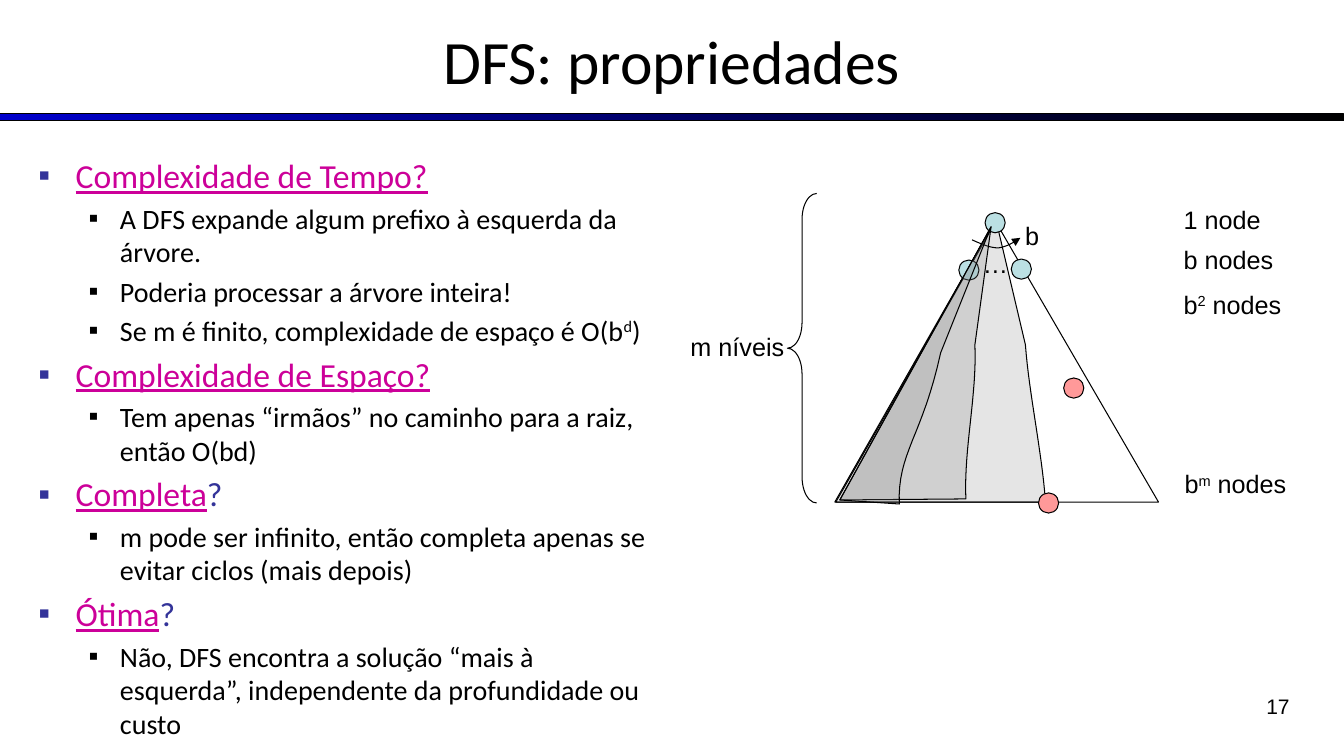
from lxml.etree import SubElement
from pptx import Presentation
from pptx.dml.color import RGBColor
from pptx.enum.shapes import MSO_SHAPE
from pptx.enum.text import MSO_ANCHOR, MSO_AUTO_SIZE, PP_ALIGN
from pptx.oxml.ns import qn
from pptx.util import Inches, Pt

BLACK, NAVY, MAGENTA = "000000", "333399", "CC0099"
NODE_BLUE, GOAL_RED, SHADE = "BBE0E3", "FF9999", "808080"
NODE_SIZE = 0.2
CURVE_STEPS = 16

TITLE = "DFS: propriedades"
# Heading, plain suffix, answers; "^" switches superscript on and off
TOPICS = [
    ("Complexidade de Tempo?", "", [
        "A DFS expande algum prefixo à esquerda da árvore.",
        "Poderia processar a árvore inteira!",
        "Se m é finito, complexidade de espaço é O(b^d^)",
    ]),
    ("Complexidade de Espaço?", "", [
        "Tem apenas “irmãos” no caminho para a raiz, então O(bd)",
    ]),
    ("Completa", "?", [
        "m pode ser infinito, então completa apenas se evitar ciclos (mais depois)",
    ]),
    ("Ótima", "?", [
        "Não, DFS encontra a solução “mais à esquerda”, "
        "independente da profundidade ou custo",
    ]),
]

# Outlines: two numbers are a line end, six numbers a Bézier curve
TREE = [(8.28, 4.98), (11.49, 4.98), (9.87, 2.19)]
WIDE_PREFIX = [(8.29, 4.98), (10.37, 4.98),
               (10.33, 4.46, 10.21, 3.93, 10.17, 3.42), (9.88, 2.19)]
MIDDLE_PREFIX = [(8.33, 4.96), (9.58, 4.95),
                 (9.56, 4.44, 9.69, 3.93, 9.67, 3.42), (9.83, 2.25)]
NARROW_PREFIX = [(8.33, 4.96), (8.92, 5),
                 (8.9, 4.49, 9.15, 4.33, 9.33, 3.5), (9.83, 2.25)]
BRANCHING_ARC = [(9.64, 2.38), (9.73, 2.42, 9.82, 2.46, 9.9, 2.46),
                 (9.98, 2.45, 10.05, 2.41, 10.12, 2.36)]

TREE_NODES = [(9.77, 2.11, NODE_BLUE), (9.51, 2.58, NODE_BLUE),
              (10.03, 2.57, NODE_BLUE), (10.3, 4.89, GOAL_RED)]
DEEP_GOAL = (10.55, 3.75, GOAL_RED)
LABELS = [
    ("…", 9.65, 2.41, 0.3), ("b", 10.07, 2.14, 0.33),
    ("1 node", 11.64, 1.98, 1.22), ("b nodes", 11.64, 2.37, 1.22),
    ("b^2^ nodes", 11.64, 2.82, 1.22), ("b^m^ nodes", 11.65, 4.6, 1.6),
    ("m níveis", 6.75, 3.24, 1.38),
]
PAGE = "17"


def rgb(value):
    return RGBColor.from_string(value)


def box(*inches):
    return [Inches(n) for n in inches]


def place(holder, *inches):
    holder.left, holder.top, holder.width, holder.height = box(*inches)


def add_run(paragraph, text, size, font, color=BLACK, underline=None):
    run = paragraph.add_run()
    run.text = text
    run.font.size, run.font.name = Pt(size), font
    run.font.color.rgb = rgb(color)
    run.font.underline = underline
    return run


def add_marked_text(paragraph, text, size, font):
    """Add runs, raising every part that stands between two "^" marks."""
    for i, part in enumerate(text.split("^")):
        if part:
            run = add_run(paragraph, part, size, font)
            if i % 2:
                run.font._element.set("baseline", "30000")


def set_bullet(paragraph, indent, hanging, color):
    props = paragraph._p.get_or_add_pPr()
    props.set("marL", str(Inches(indent)))
    props.set("indent", str(-Inches(hanging)))
    bullet_color = SubElement(props, qn("a:buClr"))
    SubElement(bullet_color, qn("a:srgbClr"), val=color)
    SubElement(props, qn("a:buFont"), typeface="Arial")
    SubElement(props, qn("a:buChar"), char="▪")


def style(shape, fill=None, opacity=None):
    shape.shadow.inherit = False
    shape.line.color.rgb = rgb(BLACK)
    shape.line.width = Pt(0.75)
    if fill is None:
        shape.fill.background()
        return
    shape.fill.solid()
    shape.fill.fore_color.rgb = rgb(fill)
    if opacity is not None:
        color = shape._element.spPr.find(qn("a:solidFill"))[0]
        SubElement(color, qn("a:alpha"), val=str(opacity * 1000))


def flatten(outline):
    """Turn the Bézier curves of an outline into short straight steps."""
    points = [outline[0]]
    for step in outline[1:]:
        if len(step) == 2:
            points.append(step)
            continue
        controls = [points[-1], step[:2], step[2:4], step[4:]]
        for n in range(1, CURVE_STEPS + 1):
            t = n / CURVE_STEPS
            weights = ((1 - t) ** 3, 3 * t * (1 - t) ** 2,
                       3 * t * t * (1 - t), t ** 3)
            points.append(tuple(sum(w * c[axis] for w, c in zip(weights, controls))
                                for axis in (0, 1)))
    return points


def add_outline(shapes, outline, close=True, fill=None, opacity=None):
    start, *rest = [box(*point) for point in flatten(outline)]
    builder = shapes.build_freeform(*start)
    builder.add_line_segments(rest, close=close)
    shape = builder.convert_to_shape()
    style(shape, fill, opacity)
    return shape


def add_node(shapes, left, top, color):
    style(shapes.add_shape(MSO_SHAPE.OVAL, *box(left, top, NODE_SIZE, NODE_SIZE)), color)


def add_label(shapes, text, left, top, width, height=0.4, size=18, align=PP_ALIGN.LEFT):
    frame = shapes.add_textbox(*box(left, top, width, height)).text_frame
    frame.word_wrap = True
    frame.paragraphs[0].alignment = align
    add_marked_text(frame.paragraphs[0], text, size, "Arial")


def fill_title(title):
    place(title, 0, -0.03, 13.33, 1.25)
    title.text_frame.vertical_anchor = MSO_ANCHOR.MIDDLE
    paragraph = title.text_frame.paragraphs[0]
    paragraph.alignment = PP_ALIGN.CENTER
    add_run(paragraph, TITLE, 44, "Calibri")


def fill_topics(body):
    place(body, 0.28, 1.49, 6.31, 5.17)
    frame = body.text_frame
    frame.auto_size = MSO_AUTO_SIZE.NONE
    frame.vertical_anchor = MSO_ANCHOR.TOP
    for i, (heading, suffix, answers) in enumerate(TOPICS):
        paragraph = frame.add_paragraph() if i else frame.paragraphs[0]
        paragraph.space_before = Pt(4.8)
        set_bullet(paragraph, 0.37, 0.37, NAVY)
        add_run(paragraph, heading, 24, "Calibri", MAGENTA, True)
        if suffix:
            add_run(paragraph, suffix, 24, "Calibri", NAVY)
        for answer in answers:
            paragraph = frame.add_paragraph()
            paragraph.level = 1
            paragraph.space_before = Pt(4)
            set_bullet(paragraph, 0.81, 0.31, BLACK)
            add_marked_text(paragraph, answer, 20, "Calibri")


def add_title_rule(shapes):
    rule = shapes.add_shape(MSO_SHAPE.RECTANGLE, *box(0, 1.13, 13.33, 0.07))
    style(rule)
    rule.fill.gradient()
    rule.fill.gradient_angle = 0
    for stop, color in zip(rule.fill.gradient_stops, ("0000CC", BLACK)):
        stop.color.rgb = rgb(color)


def add_tree(shapes):
    add_outline(shapes, WIDE_PREFIX, fill=SHADE, opacity=20)
    add_outline(shapes, TREE)
    for node in TREE_NODES:
        add_node(shapes, *node)
    arc = add_outline(shapes, BRANCHING_ARC, close=False)
    SubElement(arc.line._get_or_add_ln(), qn("a:tailEnd"), type="triangle")
    for label in LABELS:
        add_label(shapes, *label)
    levels = shapes.add_shape(MSO_SHAPE.LEFT_BRACE, *box(7.81, 1.92, 0.29, 3.07))
    levels.adjustments[0], levels.adjustments[1] = 0.884, 0.5
    style(levels)
    for prefix in (MIDDLE_PREFIX, NARROW_PREFIX):
        add_outline(shapes, prefix, fill=SHADE, opacity=20)
    add_node(shapes, *DEEP_GOAL)


def main():
    deck = Presentation()
    deck.slide_width, deck.slide_height = box(13.33, 7.5)
    slide = deck.slides.add_slide(deck.slide_layouts[1])
    fill_title(slide.shapes.title)
    fill_topics(slide.placeholders[1])
    add_title_rule(slide.shapes)
    add_tree(slide.shapes)
    add_label(slide.shapes, PAGE, 10.56, 6.83, 2.33, 0.52, 15, PP_ALIGN.RIGHT)
    deck.save("out.pptx")


if __name__ == "__main__":
    main()
